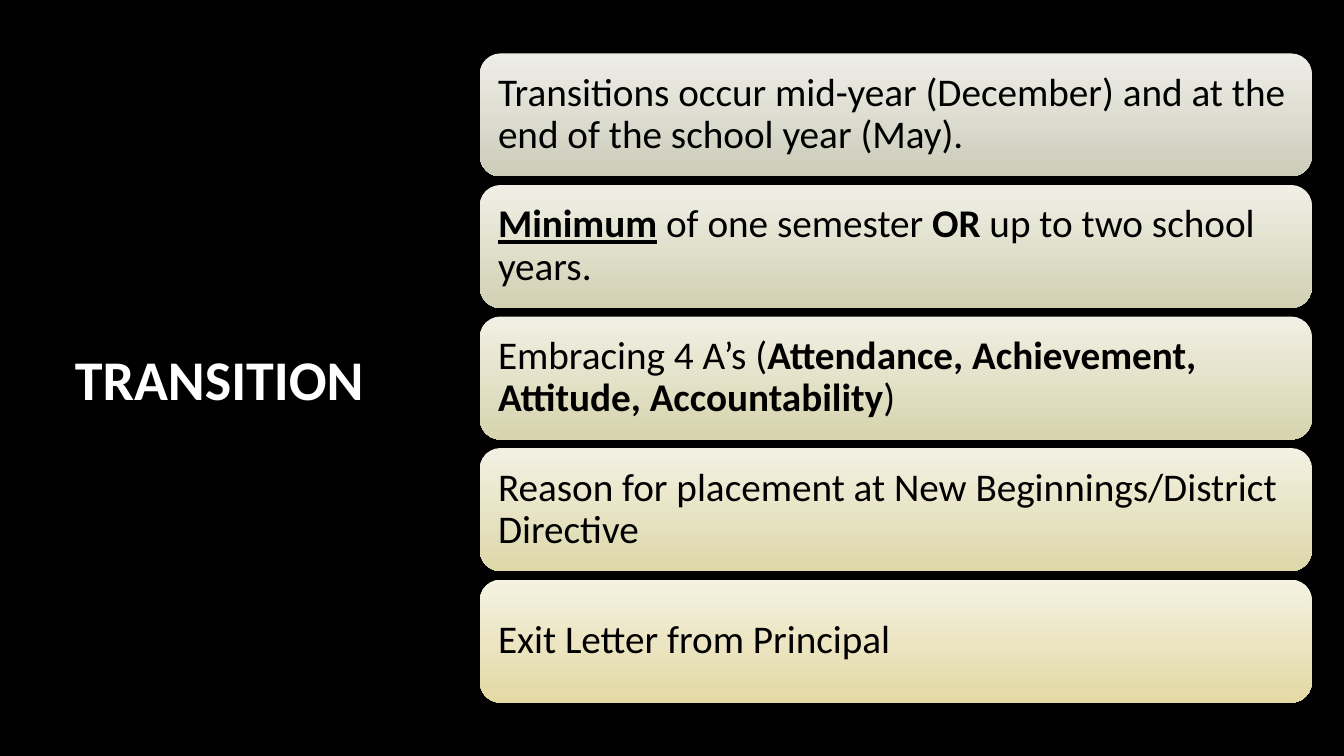
from dataclasses import dataclass

from lxml.etree import SubElement
from pptx import Presentation
from pptx.dml.color import RGBColor
from pptx.enum.shapes import MSO_SHAPE
from pptx.enum.text import MSO_ANCHOR, MSO_AUTO_SIZE, PP_ALIGN
from pptx.oxml.ns import qn
from pptx.util import Inches, Pt


@dataclass(frozen=True)
class Theme:
    font: str = "Calibri"
    background: str = "000000"
    title_color: str = "FFFFFF"
    body_color: str = "000000"
    title_size: int = 40
    body_size: int = 28


theme = Theme()


def add_text(paragraph, text, *, size, color, bold=False, underline=False):
    run = paragraph.add_run()
    run.text = text
    run.font.name = theme.font
    run.font.size = Pt(size)
    run.font.color.rgb = RGBColor.from_string(color)
    run.font.bold = bold
    run.font.underline = underline
    return run


presentation = Presentation()
presentation.slide_width = Inches(13.33)
presentation.slide_height = Inches(7.5)
slide = presentation.slides.add_slide(presentation.slide_layouts[5])
slide.background.fill.solid()
slide.background.fill.fore_color.rgb = RGBColor.from_string(theme.background)

title = slide.shapes.title
title.left, title.top = Inches(0.31), Inches(1.74)
title.width, title.height = Inches(3.73), Inches(4.02)
title.text_frame.vertical_anchor = MSO_ANCHOR.MIDDLE
title.text_frame.auto_size = MSO_AUTO_SIZE.NONE
title_paragraph = title.text_frame.paragraphs[0]
title_paragraph.alignment = PP_ALIGN.CENTER
title_run = add_text(title_paragraph, "TRANSITION", size=theme.title_size,
                     color=theme.title_color, bold=True)

title_properties = title_run.font._element
effects = SubElement(title_properties, qn("a:effectLst"))
shadow = SubElement(effects, qn("a:outerShdw"), blurRad="38100", dist="38100", dir="2700000")
SubElement(shadow, qn("a:srgbClr"), val=theme.background)
title_properties.find(qn("a:solidFill")).addnext(effects)

cards = [
    ("EEEEE8", "CCCCBA", [
        ("Transitions occur mid-year (December) and at the end of the school year (May).", {}),
    ]),
    ("EFEFE6", "D2D1B4", [
        ("Minimum", {"bold": True, "underline": True}),
        (" of one semester ", {}),
        ("OR", {"bold": True}),
        (" up to two school years.", {}),
    ]),
    ("F1F0E4", "D7D4AE", [
        ("Embracing 4 A’s (", {}),
        ("Attendance, Achievement, Attitude, Accountability", {"bold": True}),
        (")", {}),
    ]),
    ("F3F1E3", "DDD7A9", [
        ("Reason for placement at New Beginnings/District Directive", {}),
    ]),
    ("F5F2E2", "E3D9A4", [
        ("Exit Letter from Principal", {}),
    ]),
]
first_top, card_pitch = 0.53, 1.305

for index, (top_color, bottom_color, parts) in enumerate(cards):
    card = slide.shapes.add_shape(
        MSO_SHAPE.ROUNDED_RECTANGLE, Inches(4.76),
        Inches(first_top + index * card_pitch), Inches(8.25), Inches(1.22))
    card.shadow.inherit = False
    card.line.fill.background()
    card.fill.gradient()
    card.fill.gradient_angle = 270
    for stop, position, color in zip(card.fill.gradient_stops, (0, 1),
                                     (top_color, bottom_color)):
        stop.position = position
        stop.color.rgb = RGBColor.from_string(color)

    frame = card.text_frame
    frame.word_wrap = True
    frame.vertical_anchor = MSO_ANCHOR.MIDDLE
    frame.margin_left = frame.margin_right = Inches(0.12)
    frame.margin_top = frame.margin_bottom = Inches(0.12)
    paragraph = frame.paragraphs[0]
    paragraph.alignment = PP_ALIGN.LEFT
    paragraph.line_spacing = 0.9
    for text, emphasis in parts:
        add_text(paragraph, text, size=theme.body_size, color=theme.body_color, **emphasis)

presentation.save("out.pptx")
